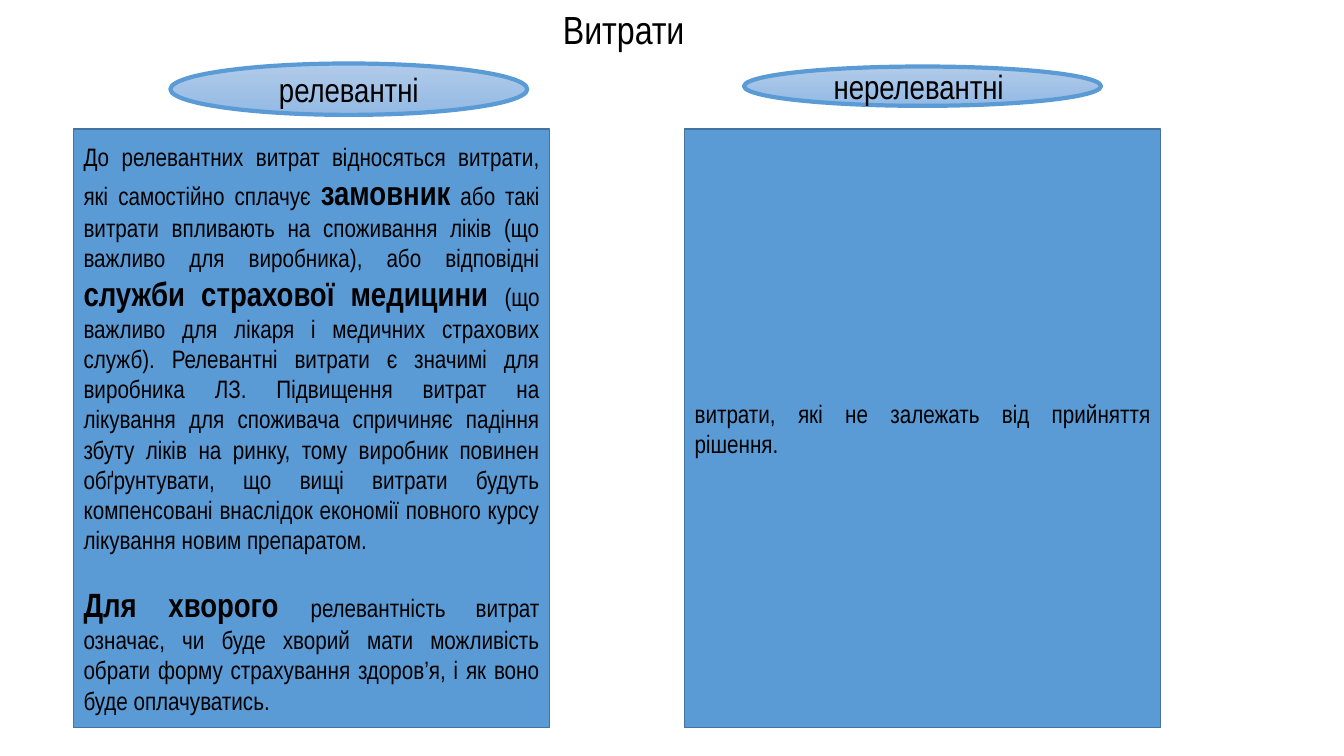
import pptx
import pptx.util
import pptx.dml.color
import pptx.enum.shapes
import pptx.enum.text

Inches = pptx.util.Inches
Pt = pptx.util.Pt
SHAPE = pptx.enum.shapes.MSO_SHAPE
ALIGN = pptx.enum.text.PP_ALIGN
ANCHOR = pptx.enum.text.MSO_ANCHOR

COLORS = {
    "text": "000000",
    "panel": "5B9BD5",
    "panel_edge": "43739E",
    "oval_top": "B1CBE9",
    "oval_bottom": "93B9E4",
}


class CostSlide:
    """Draws titles, ovals and panels on one slide in a shared style."""

    font = "Arial Narrow"

    def __init__(self, prs):
        self.slide = prs.slides.add_slide(prs.slide_layouts[6])

    def color(self, name):
        return pptx.dml.color.RGBColor.from_string(COLORS[name])

    def add_text(self, tf, paragraphs, align, anchor, gap=0):
        tf.word_wrap = True
        tf.vertical_anchor = anchor
        for i, runs in enumerate(paragraphs):
            p = tf.add_paragraph() if i else tf.paragraphs[0]
            p.alignment = align
            if i:
                p.space_before = Pt(gap)
            for text, size, bold in runs:
                r = p.add_run()
                r.text = text
                r.font.name = self.font
                r.font.size = Pt(size)
                r.font.bold = bold
                r.font.color.rgb = self.color("text")

    def title(self, text, left, top, width, height):
        sp = self.slide.shapes.add_textbox(
            Inches(left), Inches(top), Inches(width), Inches(height))
        self.add_text(sp.text_frame, [[(text, 28, False)]], ALIGN.CENTER, ANCHOR.TOP)
        sp.text_frame.paragraphs[0].line_spacing = 0.9

    def shape(self, kind, left, top, width, height, edge, weight):
        sp = self.slide.shapes.add_shape(
            kind, Inches(left), Inches(top), Inches(width), Inches(height))
        sp.shadow.inherit = False
        sp.line.color.rgb = self.color(edge)
        sp.line.width = Pt(weight)
        return sp

    def oval(self, text, left, top, width, height):
        sp = self.shape(SHAPE.OVAL, left, top, width, height, "panel", 3)
        sp.fill.gradient()
        sp.fill.gradient_angle = 270
        for stop, name in zip(sp.fill.gradient_stops, ("oval_top", "oval_bottom")):
            stop.color.rgb = self.color(name)
        self.add_text(sp.text_frame, [[(text, 24, False)]], ALIGN.CENTER, ANCHOR.MIDDLE)

    def panel(self, paragraphs, left, top, width, height):
        sp = self.shape(SHAPE.RECTANGLE, left, top, width, height, "panel_edge", 1)
        sp.fill.solid()
        sp.fill.fore_color.rgb = self.color("panel")
        self.add_text(sp.text_frame, paragraphs, ALIGN.JUSTIFY, ANCHOR.MIDDLE, gap=21)


def body(text):
    return text, 18, False


def key(text):
    return text, 24, True


RELEVANT = [
    [
        body("До релевантних витрат відносяться витрати, які самостійно сплачує "),
        key("замовник"),
        body(" або такі витрати впливають на споживання ліків "
             "(що важливо для виробника), або відповідні "),
        key("служби страхової медицини "),
        body("(що важливо для лікаря і медичних страхових служб). "
             "Релевантні витрати є значимі для виробника ЛЗ. "
             "Підвищення витрат на лікування для споживача спричиняє падіння "
             "збуту ліків на ринку, тому виробник повинен обґрунтувати, "
             "що вищі витрати будуть компенсовані внаслідок економії "
             "повного курсу лікування новим препаратом. "),
    ],
    [
        key("Для хворого "),
        body("релевантність витрат означає, чи буде хворий мати можливість "
             "обрати форму страхування здоров’я, і як воно буде оплачуватись."),
    ],
]
IRRELEVANT = [[body("витрати, які не залежать від прийняття рішення.")]]


def main():
    prs = pptx.Presentation()
    prs.slide_width = Inches(13.33)
    prs.slide_height = Inches(7.5)
    s = CostSlide(prs)
    s.title("Витрати ", 0.48, 0.06, 11.5, 4.76)
    s.oval("релевантні", 1.69, 0.63, 3.54, 0.51)
    s.oval("нерелевантні ", 7.38, 0.66, 3.54, 0.39)
    for left, paragraphs in ((0.73, RELEVANT), (6.79, IRRELEVANT)):
        s.panel(paragraphs, left, 1.28, 4.72, 5.94)
    prs.save("out.pptx")


if __name__ == "__main__":
    main()
